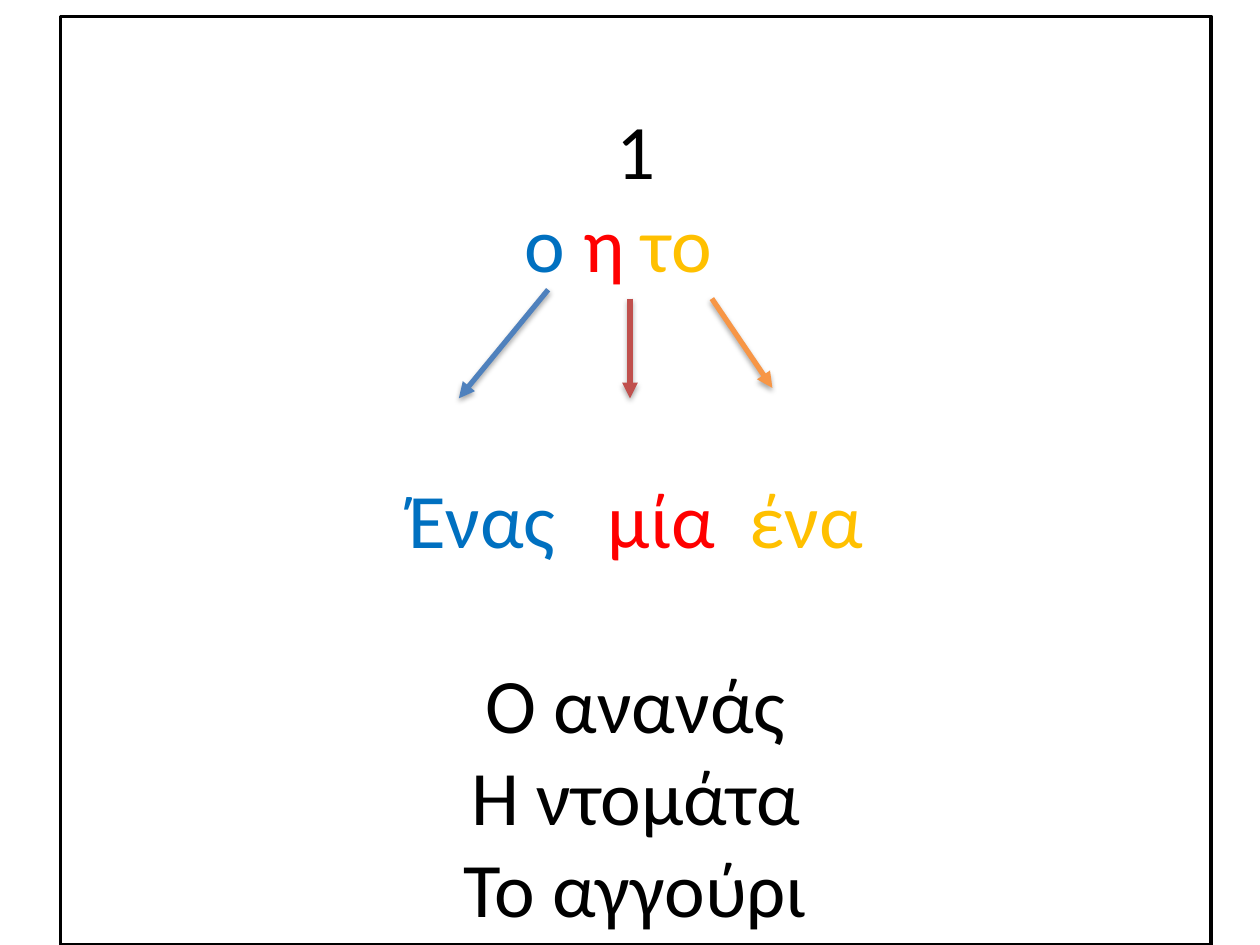
from dataclasses import dataclass

from lxml.etree import SubElement
from pptx import Presentation
from pptx.dml.color import RGBColor as RGB
from pptx.enum.shapes import MSO_CONNECTOR as CONN, MSO_SHAPE as SHAPE
from pptx.enum.text import MSO_ANCHOR as ANCHOR, PP_ALIGN as ALIGN
from pptx.oxml.ns import qn
from pptx.util import Cm, Pt


@dataclass(frozen=True)
class Theme:
    font: str = "Calibri"
    size: float = 44
    pitch: float = 52.7
    space: float = 9.9  # width of one space at this size
    ink: str = "000000"
    paper: str = "FFFFFF"
    masculine: str = "0070C0"
    feminine: str = "FF0000"
    neuter: str = "FFC000"


@dataclass(frozen=True)
class Word:
    text: str
    color: str
    gap: int = 0  # spaces after the word


@dataclass(frozen=True)
class Line:
    words: list[Word]
    skip: int = 0  # empty line heights above
    indent_right: float = 0


@dataclass(frozen=True)
class Arrow:
    start: tuple[float, float]
    end: tuple[float, float]
    color: str


T = Theme()

LINES = [
    Line([Word("1", T.ink)]),
    Line([Word("ο", T.masculine, 1), Word("η", T.feminine, 1),
          Word("το", T.neuter)], indent_right=2 * T.space),
    Line([Word("Ένας", T.masculine, 3), Word("μία", T.feminine, 2),
          Word("ένα", T.neuter)], skip=2),
    Line([Word("Ο ανανάς", T.ink)], skip=1),
    Line([Word("Η ντομάτα", T.ink)]),
    Line([Word("Το αγγούρι", T.ink)]),
]

# Ends in centimetres
ARROWS = [
    Arrow((11.05, 5.84), (9.25, 8.03), "4F81BD"),
    Arrow((12.7, 6.02), (12.7, 8.03), "C0504D"),
    Arrow((14.35, 6.02), (15.57, 7.82), "F79646"),
]


def add_text(p, text: str, *, color: str, tracking: float = 0) -> None:
    r = p.add_run()
    r.text = text
    r.font.name, r.font.size = T.font, Pt(T.size)
    r.font.color.rgb = RGB.from_string(color)
    if tracking:
        r.font._element.set("spc", str(round(tracking * 100)))


def add_line(p, line: Line) -> None:
    p.alignment = ALIGN.CENTER
    p.line_spacing = Pt(T.pitch)
    p.space_before = Pt(line.skip * T.pitch)
    # Set on every line, since an unset indent carries over
    p._p.get_or_add_pPr().set("marR", str(Pt(line.indent_right)))
    for word in line.words:
        add_text(p, word.text, color=word.color)
        if word.gap:
            add_text(p, " ", color=word.color,
                     tracking=(word.gap - 1) * T.space)


def add_card(s, lines: list[Line]) -> None:
    sp = s.shapes.add_shape(SHAPE.RECTANGLE, Cm(1.22), Cm(0.33),
                            Cm(23.19), Cm(18.72))
    sp.shadow.inherit = False
    sp.fill.solid()
    sp.fill.fore_color.rgb = RGB.from_string(T.paper)
    sp.line.color.rgb = RGB.from_string(T.ink)
    sp.line.width = Pt(2)
    tf = sp.text_frame
    tf.word_wrap = True
    tf.vertical_anchor = ANCHOR.TOP
    tf.margin_top = Cm(1.75)
    for i, line in enumerate(lines):
        add_line(tf.add_paragraph() if i else tf.paragraphs[0], line)


def add_arrow(s, arrow: Arrow) -> None:
    ends = [Cm(v) for v in arrow.start + arrow.end]
    cx = s.shapes.add_connector(CONN.STRAIGHT, *ends)
    cx.line.color.rgb = RGB.from_string(arrow.color)
    cx.line.width = Pt(3)
    SubElement(cx.line._get_or_add_ln(), qn("a:tailEnd"), type="triangle")
    # Soft shadow straight below
    effects = SubElement(cx._element.spPr, qn("a:effectLst"))
    shadow = SubElement(effects, qn("a:outerShdw"), blurRad=str(Pt(3.1)),
                        dist=str(Pt(1.8)), dir="5400000", rotWithShape="0")
    black = SubElement(shadow, qn("a:srgbClr"), val=T.ink)
    SubElement(black, qn("a:alpha"), val="35000")


def main() -> None:
    prs = Presentation()
    prs.slide_width, prs.slide_height = Cm(25.4), Cm(19.05)
    s = prs.slides.add_slide(prs.slide_layouts[6])
    # Framed card with the articles, numerals and nouns
    add_card(s, LINES)
    # Arrows from each article to its numeral
    for arrow in ARROWS:
        add_arrow(s, arrow)
    prs.save("out.pptx")


if __name__ == "__main__":
    main()
